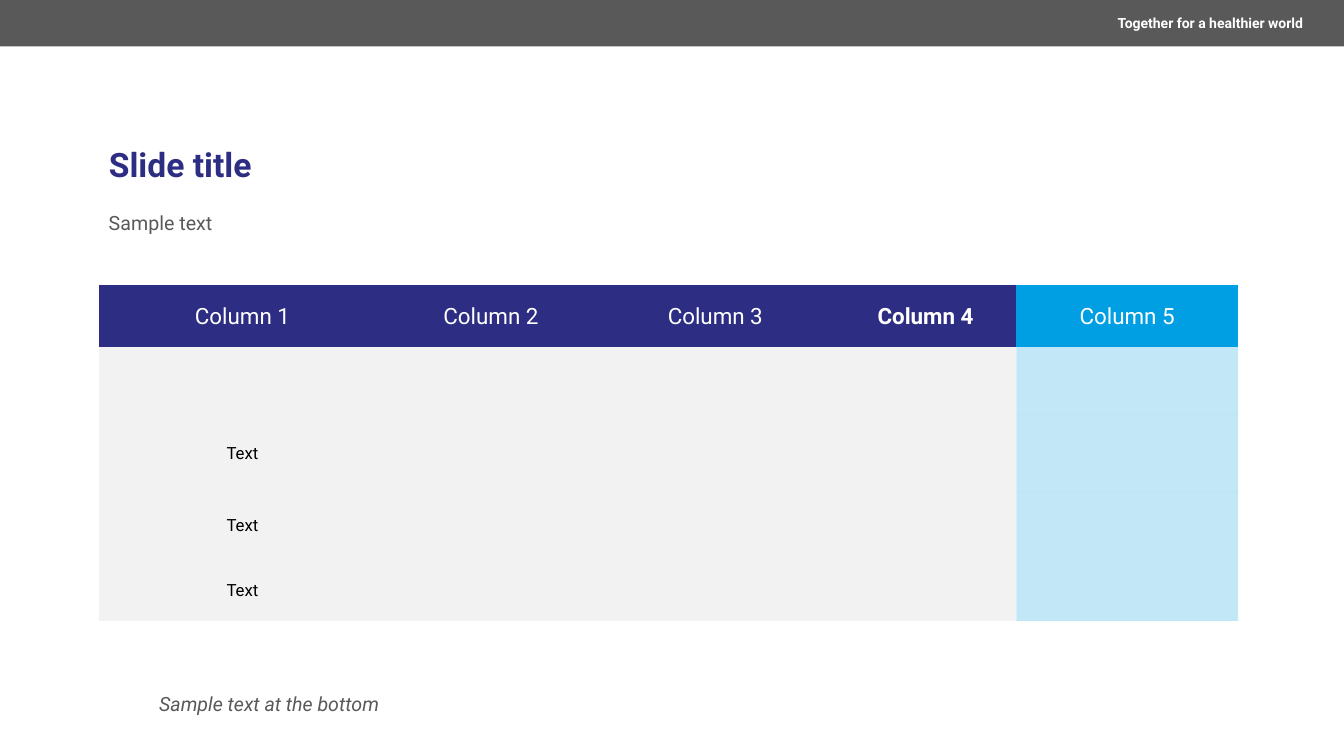
from lxml import etree
from pptx import Presentation
from pptx.dml.color import RGBColor
from pptx.enum.shapes import MSO_SHAPE
from pptx.enum.text import MSO_ANCHOR, MSO_AUTO_SIZE, PP_ALIGN
from pptx.oxml.ns import qn
from pptx.util import Inches, Pt

LEFT, CENTER, RIGHT = PP_ALIGN.LEFT, PP_ALIGN.CENTER, PP_ALIGN.RIGHT
MIDDLE, BOTTOM = MSO_ANCHOR.MIDDLE, MSO_ANCHOR.BOTTOM
RECTANGLE = MSO_SHAPE.RECTANGLE
FIT_SHAPE, NO_FIT = MSO_AUTO_SIZE.SHAPE_TO_FIT_TEXT, MSO_AUTO_SIZE.NONE

SLIDE_WIDTH, SLIDE_HEIGHT = 13.33, 7.5
MARGIN = 0.98
TEXT_WIDTH = 10.78
FONT = "Roboto"
NAVY, BLUE = "2D2E83", "009FE3"
GREY, PALE, WHITE, BLACK = "595959", "F2F2F2", "FFFFFF", "000000"

HEADINGS = ["Column 1", "Column 2", "Column 3", "Column 4", "Column 5"]
ROW_LABELS = ["", "Text", "Text", "Text"]
COLUMN_WIDTHS = [2.85, 2.08, 2.37, 1.8, 2.2]
ROW_HEIGHTS = [0.61, 0.67, 0.77, 0.67, 0.61]
HIGHLIGHT_ALPHA = 24
NO_STYLE_NO_GRID = "{2D5ABB26-0587-4C30-8999-92F81FD0307C}"


def rgb(color):
    return RGBColor.from_string(color)


def place(shape, left, top, width, height):
    shape.left, shape.top = Inches(left), Inches(top)
    shape.width, shape.height = Inches(width), Inches(height)


def write(frame, text, size, color, align=LEFT, bold=False, italic=False):
    """Fill the frame's first paragraph and return it."""
    paragraph = frame.paragraphs[0]
    paragraph.text = text
    paragraph.alignment = align
    font = paragraph.font
    font.name, font.size = FONT, Pt(size)
    font.bold, font.italic = bold, italic
    font.color.rgb = rgb(color)
    return paragraph


def set_fill(target, color, alpha=None):
    """Give a shape or cell a solid fill; alpha is its opacity in percent."""
    target.fill.solid()
    target.fill.fore_color.rgb = rgb(color)
    if alpha is not None:
        cell_color = target._tc.tcPr.find(".//" + qn("a:srgbClr"))
        etree.SubElement(cell_color, qn("a:alpha"), val=str(alpha * 1000))


def add_title(slide, text):
    title = slide.shapes.title
    place(title, MARGIN, 1.21, 5.01, 0.67)
    frame = title.text_frame
    frame.vertical_anchor = BOTTOM
    frame.auto_size = NO_FIT
    write(frame, text, 24, NAVY, bold=True).line_spacing = 0.9


def add_text(slide, box, text, size, color, **style):
    frame = slide.shapes.add_textbox(*map(Inches, box)).text_frame
    frame.word_wrap = True
    frame.auto_size = FIT_SHAPE
    return write(frame, text, size, color, **style)


def add_banner(slide, motto):
    height = 0.46
    band = slide.shapes.add_shape(
        RECTANGLE, 0, 0, Inches(SLIDE_WIDTH), Inches(height))
    band.shadow.inherit = False
    set_fill(band, GREY)
    band.line.fill.background()
    add_text(slide, (9.63, 0.09, 3.39, 0.27), motto, 10, WHITE,
             align=RIGHT, bold=True)


def write_cell(cell, text, size, color, bold=False):
    cell.vertical_anchor = MIDDLE
    cell.margin_left = cell.margin_right = cell.margin_top = Inches(0.01)
    cell.margin_bottom = 0
    write(cell.text_frame, text, size, color, align=CENTER, bold=bold)


def add_table(slide):
    """Draw the heading row and body, with the last column highlighted."""
    table = slide.shapes.add_table(
        len(ROW_HEIGHTS), len(COLUMN_WIDTHS), Inches(MARGIN), Inches(2.83),
        Inches(sum(COLUMN_WIDTHS)), Inches(sum(ROW_HEIGHTS))).table
    table.first_row = table.horz_banding = False
    table._tbl.tblPr.find(qn("a:tableStyleId")).text = NO_STYLE_NO_GRID
    for column, width in zip(table.columns, COLUMN_WIDTHS):
        column.width = Inches(width)
    for row, height in zip(table.rows, ROW_HEIGHTS):
        row.height = Inches(height)

    last = len(HEADINGS) - 1
    for index, heading in enumerate(HEADINGS):
        head = table.cell(0, index)
        write_cell(head, heading, 16, WHITE, bold=heading == "Column 4")
        set_fill(head, BLUE if index == last else NAVY)
        for row in range(1, len(ROW_HEIGHTS)):
            if index == last:
                set_fill(table.cell(row, index), BLUE, HIGHLIGHT_ALPHA)
            else:
                set_fill(table.cell(row, index), PALE)
    for row, label in enumerate(ROW_LABELS, start=1):
        if label:
            write_cell(table.cell(row, 0), label, 12, BLACK)


def main():
    deck = Presentation()
    deck.slide_width, deck.slide_height = Inches(SLIDE_WIDTH), Inches(SLIDE_HEIGHT)
    slide = deck.slides.add_slide(deck.slide_layouts.get_by_name("Title Only"))

    add_title(slide, "Slide title")
    add_text(slide, (MARGIN, 2.04, TEXT_WIDTH, 0.34), "Sample text", 14, GREY)
    add_banner(slide, "Together for a healthier world")
    add_table(slide)
    footnote = add_text(slide, (MARGIN, 6.82, TEXT_WIDTH, 0.34),
                        "Sample text at the bottom", 14, GREY, italic=True)
    footnote.level = 1
    footnote._p.get_or_add_pPr().set("marL", str(Inches(0.5)))

    deck.save("out.pptx")


if __name__ == "__main__":
    main()
